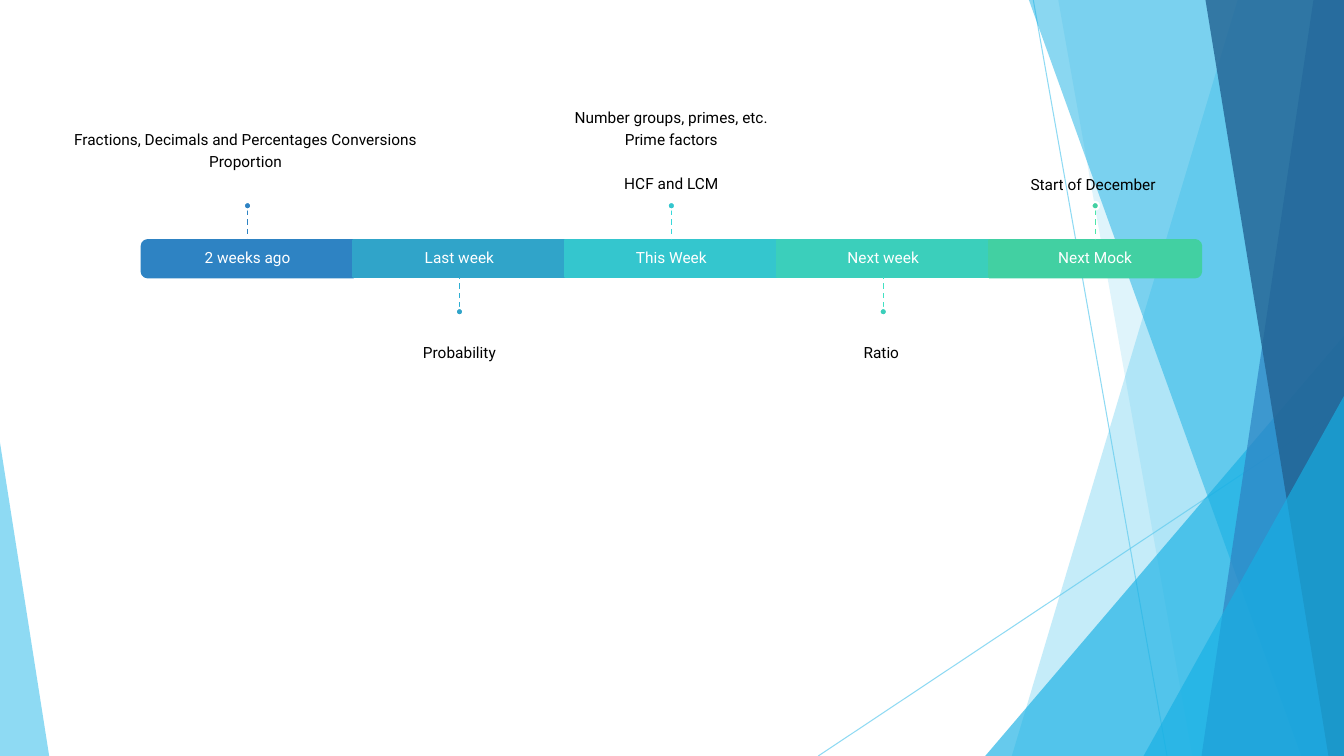
import dataclasses

import lxml.etree
import pptx
import pptx.dml.color
import pptx.enum.dml
import pptx.enum.shapes
import pptx.enum.text
import pptx.oxml.ns
import pptx.util

Cm = pptx.util.Cm
Pt = pptx.util.Pt
Shapes = pptx.enum.shapes.MSO_SHAPE
Anchor = pptx.enum.text.MSO_ANCHOR


@dataclasses.dataclass(frozen=True)
class Theme:
    """Colours and type of the slide."""
    font: str = "Roboto"
    size: float = 11
    line_spacing: float = 0.9
    space_after: float = 4
    gap_before: float = 15.5
    text: str = "000000"
    white: str = "FFFFFF"
    pale: str = "5FCBEF"
    bright: str = "17B0E4"
    blue: str = "2E83C3"
    navy: str = "226292"


@dataclasses.dataclass(frozen=True)
class Stage:
    """One timeline segment; gap_line is the topic that gets extra space before it."""
    label: str
    color: str
    stem_color: str
    topics: tuple
    gap_line: int = -1
    lift: float = 0


THEME = Theme()
STAGES = (
    Stage("2 weeks ago", "2E83C3", "2E83C3",
          ("Fractions, Decimals and Percentages Conversions ", "Proportion "), lift=0.55),
    Stage("Last week", "30A4C9", "2EAED3", ("Probability",)),
    Stage("This Week", "34C6CE", "38D8DA",
          ("Number groups, primes, etc.", "Prime factors", "HCF and LCM"), gap_line=2),
    Stage("Next week", "3BCFBB", "42E1C3", ("Ratio ",)),
    Stage("Next Mock", "42D0A2", "4DE7AA", ("Start of December ",)),
)


def rgb(color):
    """Return a colour object for a hex string."""
    return pptx.dml.color.RGBColor.from_string(color)


def set_opacity(shape, percent):
    """Make the colours of a shape partly transparent."""
    for color in shape.element.spPr.iter(pptx.oxml.ns.qn("a:srgbClr")):
        alpha = lxml.etree.SubElement(color, pptx.oxml.ns.qn("a:alpha"))
        alpha.set("val", str(percent * 1000))


def paint(shape, color, outline=None):
    """Fill a shape, with an outline only when a colour is given."""
    shape.shadow.inherit = False
    shape.fill.solid()
    shape.fill.fore_color.rgb = rgb(color)
    if outline:
        shape.line.color.rgb = rgb(outline)
        shape.line.width = Pt(1.5)
    else:
        shape.line.fill.background()


def add_line(slide, start, end, color, width):
    """Draw a straight line between two points in centimetres."""
    line = slide.shapes.add_connector(
        pptx.enum.shapes.MSO_CONNECTOR.STRAIGHT, *map(Cm, (*start, *end)))
    line.line.color.rgb = rgb(color)
    line.line.width = Pt(width)
    lxml.etree.SubElement(line.element.spPr, pptx.oxml.ns.qn("a:effectLst"))
    return line


def add_text(slide, box, lines, color, anchor, gap_line=-1):
    """Place centred paragraphs in a box given in centimetres."""
    frame = slide.shapes.add_textbox(*map(Cm, box)).text_frame
    frame.word_wrap = True
    frame.vertical_anchor = anchor
    frame.margin_left = frame.margin_right = 0
    frame.margin_top = frame.margin_bottom = Cm(0.23)
    frame.text = "\n".join(lines)
    for index, paragraph in enumerate(frame.paragraphs):
        paragraph.alignment = pptx.enum.text.PP_ALIGN.CENTER
        paragraph.line_spacing = THEME.line_spacing
        paragraph.space_after = Pt(THEME.space_after)
        if index == gap_line:
            paragraph.space_before = Pt(THEME.gap_before)
        for run in paragraph.runs:
            run.font.name = THEME.font
            run.font.size = Pt(THEME.size)
            run.font.color.rgb = rgb(color)


def add_band(slide, box, top_x, bottom_x, color, opacity):
    """Fill from a slanted left edge to the right side of the box."""
    left, top, width, height = box
    right, bottom = left + width, top + height
    builder = slide.shapes.build_freeform(Cm(left + top_x), Cm(top))
    corners = ((right, top), (right, bottom), (left + bottom_x, bottom))
    builder.add_line_segments([(Cm(x), Cm(y)) for x, y in corners])
    band = builder.convert_to_shape()
    paint(band, color)
    set_opacity(band, opacity)


def add_corner(slide, box, width, height, peak, color, opacity):
    """Put a right triangle in a bottom corner: peak 0 is left, 1 is right."""
    left = box[0] + peak * (box[2] - width)
    top = box[1] + box[3] - height
    corner = slide.shapes.add_shape(
        Shapes.ISOSCELES_TRIANGLE, *map(Cm, (left, top, width, height)))
    corner.adjustments[0] = peak
    paint(corner, color)
    set_opacity(corner, opacity)


def add_backdrop(slide, box):
    """Draw the overlapping translucent facets that frame the slide."""
    left, top, width, height = box
    rays = (((26.04, 0), (29.41, height)), ((width, 10.24), (20.62, height)))
    for start, end in rays:
        ray = add_line(slide, (left + start[0], top + start[1]),
                       (left + end[0], top + end[1]), THEME.pale, 0.75)
        set_opacity(ray, 70)
    add_band(slide, box, 31.19, 25.5, THEME.pale, 36)
    add_band(slide, box, 26.67, 30.05, THEME.pale, 20)
    add_corner(slide, box, 9.04, 10.59, 1, THEME.bright, 66)
    add_band(slide, box, 25.93, 32.79, THEME.bright, 50)
    add_band(slide, box, 33.1, 30.28, THEME.blue, 70)
    add_band(slide, box, 30.38, 33.48, THEME.navy, 80)
    add_corner(slide, box, 5.05, 9.07, 1, THEME.bright, 66)
    add_corner(slide, box, 1.24, 7.9, 0, THEME.pale, 70)


def add_segment(slide, box, stage, rotation):
    """Draw one bar segment; a rotated one gets rounded outer corners."""
    left, top, width, height = box
    if rotation:
        turned = (left + (width - height) / 2, top + (height - width) / 2, height, width)
        segment = slide.shapes.add_shape(Shapes.ROUND_2_SAME_RECTANGLE, *map(Cm, turned))
        segment.rotation = rotation
    else:
        segment = slide.shapes.add_shape(Shapes.RECTANGLE, *map(Cm, box))
    paint(segment, stage.color, stage.color)
    add_text(slide, box, (stage.label,), THEME.white, Anchor.MIDDLE)


def add_callout(slide, box, stage, above):
    """Attach a dashed stem, a dot and topics above or below a segment."""
    left, top, width, height = box
    center = left + width / 2
    stem, dot, text_width, text_height = 0.77, 0.19, 8.92, 3.3
    edge = top if above else top + height
    tip = edge - stem if above else edge + stem
    dot_top = tip - dot if above else tip
    text_top = dot_top - text_height - stage.lift if above else tip + 0.73
    add_text(slide, (center - text_width / 2, text_top, text_width, text_height),
             stage.topics, THEME.text, Anchor.BOTTOM if above else Anchor.TOP,
             stage.gap_line)
    line = add_line(slide, (center, tip), (center, edge), stage.stem_color, 1)
    line.line.dash_style = pptx.enum.dml.MSO_LINE.DASH
    marker = slide.shapes.add_shape(
        Shapes.OVAL, *map(Cm, (center - dot / 2, dot_top, dot, dot)))
    paint(marker, stage.color, THEME.white)


def add_timeline(slide, box):
    """Divide the bar evenly, with callouts alternating above and below."""
    left, top, width, height = box
    step = width / len(STAGES)
    rotations = {0: 270, len(STAGES) - 1: 90}
    for index, stage in enumerate(STAGES):
        segment_box = (left + index * step, top, step, height)
        add_segment(slide, segment_box, stage, rotations.get(index, 0))
        add_callout(slide, segment_box, stage, index % 2 == 0)


def main():
    """Build and save the presentation."""
    presentation = pptx.Presentation()
    presentation.slide_width, presentation.slide_height = Cm(33.87), Cm(19.05)
    slide = presentation.slides.add_slide(presentation.slide_layouts[6])
    add_backdrop(slide, (0, 0, 33.87, 19.05))
    add_timeline(slide, (3.57, 6.05, 26.7, 0.94))
    presentation.save("out.pptx")


if __name__ == "__main__":
    main()
